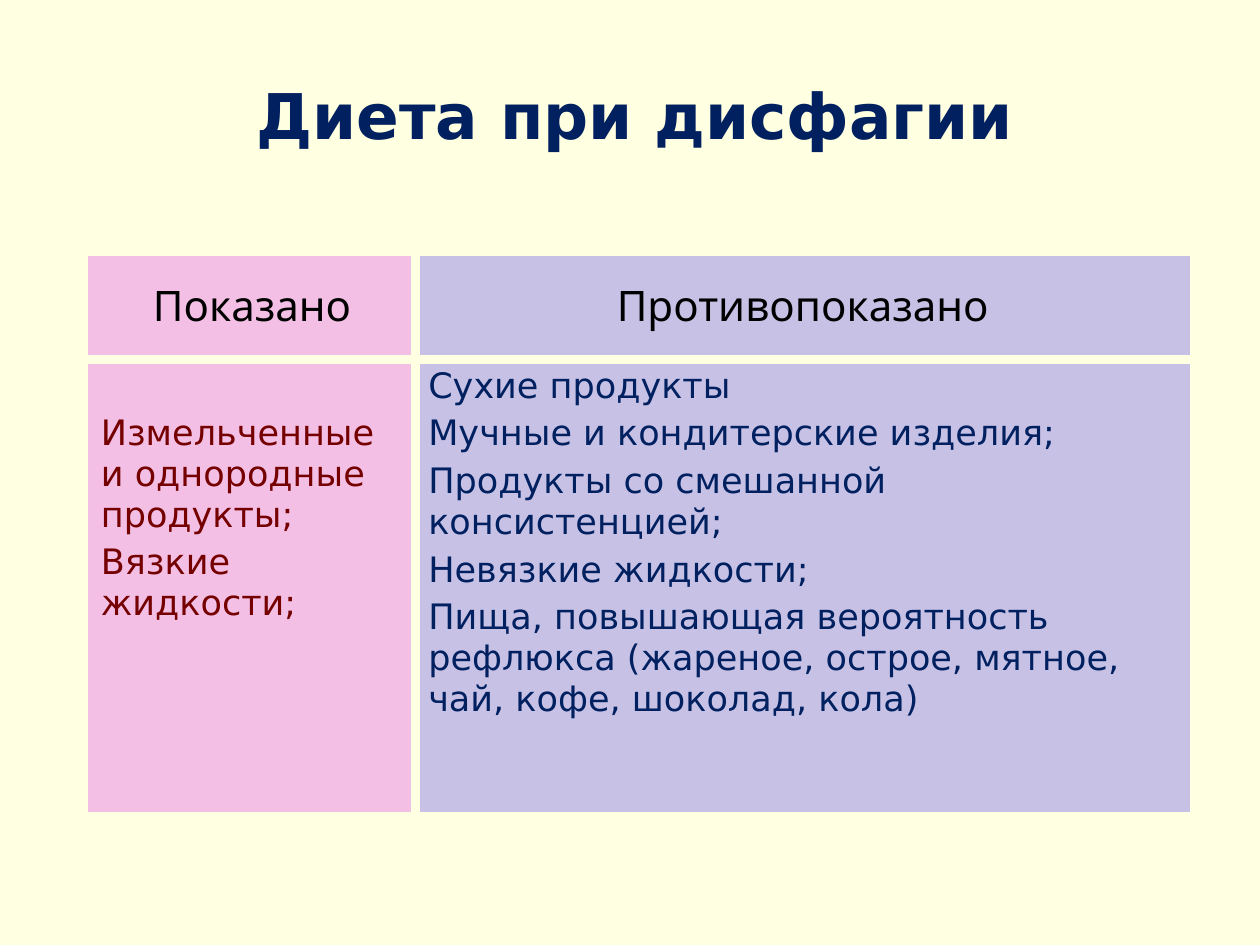
import pptx
import pptx.dml.color
import pptx.enum.text
import pptx.util
from lxml import etree
from pptx.oxml.ns import qn

Cm, Pt = pptx.util.Cm, pptx.util.Pt
ALIGN = pptx.enum.text.PP_ALIGN
ANCHOR = pptx.enum.text.MSO_ANCHOR

TITLE = "Диета при дисфагии"
CREAM, NAVY = "FFFFE1", "002060"
COLUMNS = [
    dict(heading="Показано", width=6.6, fill="F3BFE5", color="740000", top=1.09,
         items=["Измельченные и однородные продукты;", "Вязкие жидкости;"]),
    dict(heading="Противопоказано", width=15.6, fill="C6C1E5", color=NAVY, top=0.13,
         items=["Сухие продукты", "Мучные и кондитерские изделия;",
                "Продукты со смешанной консистенцией;", "Невязкие жидкости;",
                "Пища, повышающая вероятность рефлюкса "
                "(жареное, острое, мятное, чай, кофе, шоколад, кола)"]),
]
ROW_HEIGHTS = [2.08, 9.12]


def rgb(value):
    return pptx.dml.color.RGBColor.from_string(value)


def write(frame, lines, font, size, color, align, bold=False):
    frame.text = "\n".join(lines)
    for index, paragraph in enumerate(frame.paragraphs):
        paragraph.alignment = align
        paragraph.space_before = Pt(size * 0.2 if index else 0)
        for run in paragraph.runs:
            run.font.name = font
            run.font.size = Pt(size)
            run.font.bold = bold
            run.font.color.rgb = rgb(color)


def set_borders(cell, inner_sides):
    properties = cell._tc.get_or_add_tcPr()
    for side in "LRTB":
        border = etree.SubElement(properties, qn(f"a:ln{side}"))
        if side in inner_sides:
            border.set("w", str(Pt(6)))
            solid = etree.SubElement(border, qn("a:solidFill"))
            etree.SubElement(solid, qn("a:srgbClr")).set("val", CREAM)
        else:
            etree.SubElement(border, qn("a:noFill"))


def main():
    deck = pptx.Presentation()
    deck.slide_width, deck.slide_height = Cm(25.4), Cm(19.05)
    slide = deck.slides.add_slide(deck.slide_layouts[5])
    slide.background.fill.solid()
    slide.background.fill.fore_color.rgb = rgb(CREAM)

    title = slide.shapes.title
    title.left, title.top, title.width, title.height = Cm(1.9), Cm(0.71), Cm(21.8), Cm(3.18)
    write(title.text_frame, [TITLE], "DejaVu Sans", 36, NAVY, ALIGN.CENTER, bold=True)
    title.text_frame.vertical_anchor = ANCHOR.MIDDLE

    total_width = sum(column["width"] for column in COLUMNS)
    diet = slide.shapes.add_table(2, len(COLUMNS), Cm(1.78), Cm(5.16),
                                  Cm(total_width), Cm(sum(ROW_HEIGHTS))).table
    diet.first_row = diet.horz_banding = False
    for row, height in zip(diet.rows, ROW_HEIGHTS):
        row.height = Cm(height)

    for index, column in enumerate(COLUMNS):
        diet.columns[index].width = Cm(column["width"])
        heading, advice = diet.cell(0, index), diet.cell(1, index)
        inner_side = "L" if index else "R"
        for cell, row_side in ((heading, "B"), (advice, "T")):
            set_borders(cell, inner_side + row_side)
            cell.fill.solid()
            cell.fill.fore_color.rgb = rgb(column["fill"])
        write(heading.text_frame, [column["heading"]], "Karla", 24, "000000", ALIGN.CENTER)
        heading.vertical_anchor = ANCHOR.MIDDLE
        write(advice.text_frame, column["items"], "DejaVu Sans", 20, column["color"], ALIGN.LEFT)
        advice.vertical_anchor = ANCHOR.TOP
        advice.margin_top = Cm(column["top"])

    deck.save("out.pptx")


if __name__ == "__main__":
    main()
